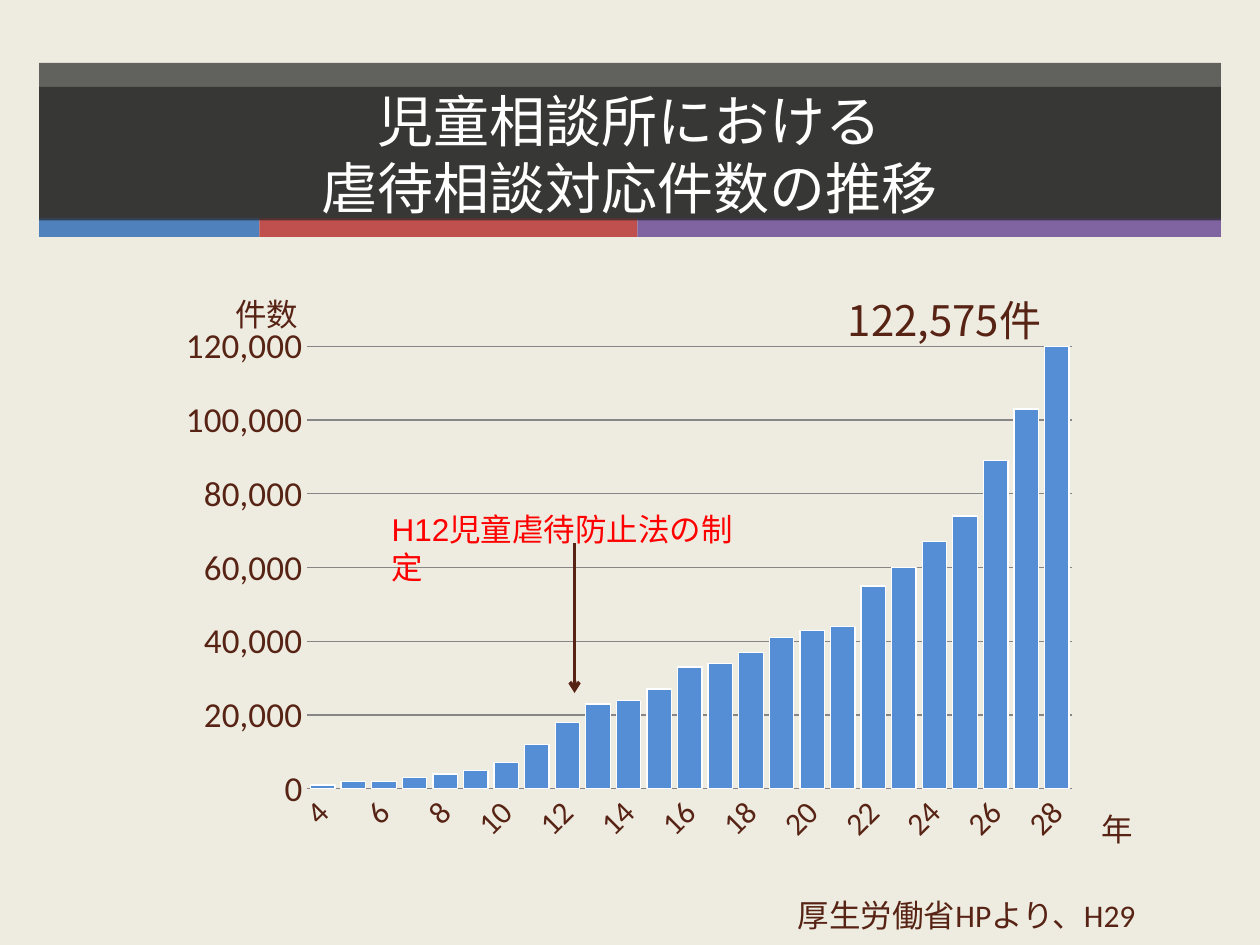
"""Build a slide charting child abuse consultations handled per year."""
from dataclasses import dataclass

import pptx
import pptx.chart.data
import pptx.dml.color
import pptx.enum.chart
import pptx.enum.shapes
import pptx.enum.text
import pptx.oxml
import pptx.oxml.ns
import pptx.util
from pptx.util import Inches

ALIGN = pptx.enum.text.PP_ALIGN
ANCHOR = pptx.enum.text.MSO_ANCHOR


@dataclass(frozen=True)
class Theme:
    background: str = "EEECE1"
    band: str = "262626"
    stripes: tuple = ("4F81BD", "C0504D", "8064A2")
    ink: str = "572314"
    alert: str = "FF0000"
    white: str = "FFFFFF"
    bar: str = "558ED5"
    grid: str = "868686"
    body_font: str = "Calibri"
    title_font: str = "Arial"
    figure_font: str = "Noto Sans CJK JP"
    title_size: int = 32
    figure_size: int = 24
    axis_size: int = 20
    body_size: int = 18


def rgb(color):
    return pptx.dml.color.RGBColor.from_string(color)


def append_xml(parent, tag, **attributes):
    child = pptx.oxml.parse_xml(f"<{tag} {pptx.oxml.ns.nsdecls(tag.split(':')[0])}/>")
    for name, value in attributes.items():
        child.set(name, str(value))
    parent.append(child)
    return child


def set_font(font, size, color, name):
    font.size = pptx.util.Pt(size)
    font.name = name
    font.color.rgb = rgb(color)


def write(frame, text, *, size, color, font, align=ALIGN.LEFT, anchor=ANCHOR.TOP, wrap=True):
    frame.word_wrap = wrap
    frame.vertical_anchor = anchor
    paragraph = frame.paragraphs[0]
    paragraph.text = text
    paragraph.alignment = align
    for run in paragraph.runs:
        set_font(run.font, size, color, font)


class SlideBuilder:
    def __init__(self, slide, theme):
        self.slide = slide
        self.theme = theme
        slide.background.fill.solid()
        slide.background.fill.fore_color.rgb = rgb(theme.background)

    def rectangle(self, left, top, width, height, color, opacity=100):
        shape = self.slide.shapes.add_shape(
            pptx.enum.shapes.MSO_SHAPE.RECTANGLE,
            Inches(left), Inches(top), Inches(width), Inches(height))
        shape.shadow.inherit = False
        shape.line.fill.background()
        shape.fill.solid()
        shape.fill.fore_color.rgb = rgb(color)
        if opacity < 100:
            tint = shape.fill._xPr.find(".//" + pptx.oxml.ns.qn("a:srgbClr"))
            append_xml(tint, "a:alpha", val=opacity * 1000)
        return shape

    def label(self, left, top, width, height, text, **style):
        box = self.slide.shapes.add_textbox(
            Inches(left), Inches(top), Inches(width), Inches(height))
        defaults = dict(size=self.theme.body_size, color=self.theme.ink,
                        font=self.theme.body_font)
        write(box.text_frame, text, **{**defaults, **style})

    def arrow(self, x, top, bottom):
        line = self.slide.shapes.add_connector(
            pptx.enum.shapes.MSO_CONNECTOR.STRAIGHT,
            Inches(x), Inches(top), Inches(x), Inches(bottom))
        line.line.color.rgb = rgb(self.theme.ink)
        line.line.width = pptx.util.Pt(2)
        append_xml(line.line._get_or_add_ln(), "a:tailEnd", type="arrow")
        append_xml(line._element.spPr, "a:effectLst")

    def column_chart(self, left, top, width, height, years, cases, plot):
        theme = self.theme
        chart_data = pptx.chart.data.CategoryChartData()
        chart_data.categories = [str(year) for year in years]
        chart_data.add_series("件数", cases)
        chart = self.slide.shapes.add_chart(
            pptx.enum.chart.XL_CHART_TYPE.COLUMN_CLUSTERED,
            Inches(left), Inches(top), Inches(width), Inches(height), chart_data).chart
        chart.has_legend = False
        chart.has_title = False
        set_font(chart.font, theme.body_size, theme.ink, theme.body_font)

        columns = chart.plots[0]
        columns.gap_width = 25
        columns.overlap = -25
        columns.vary_by_categories = False
        bars = columns.series[0].format
        bars.fill.solid()
        bars.fill.fore_color.rgb = rgb(theme.bar)
        bars.line.color.rgb = rgb(theme.white)
        bars.line.width = pptx.util.Pt(0.75)

        for axis, size in ((chart.category_axis, theme.body_size),
                           (chart.value_axis, theme.axis_size)):
            axis.major_tick_mark = pptx.enum.chart.XL_TICK_MARK.NONE
            axis.minor_tick_mark = pptx.enum.chart.XL_TICK_MARK.NONE
            set_font(axis.tick_labels.font, size, theme.ink, theme.body_font)
        self.style_axes(chart.category_axis, chart.value_axis)
        shares = [inches / whole for inches, whole in zip(plot, (width, height) * 2)]
        self.place_plot(chart, shares)

    def style_axes(self, year_axis, case_axis):
        year_axis.format.line.color.rgb = rgb(self.theme.grid)
        year_axis._element.txPr.bodyPr.set("rot", "-2700000")
        skip = append_xml(year_axis._element, "c:tickLblSkip", val=2)
        year_axis._element.find(pptx.oxml.ns.qn("c:noMultiLvlLbl")).addprevious(skip)
        case_axis.minimum_scale = 0
        case_axis.maximum_scale = 120000
        case_axis.major_unit = 20000
        case_axis.format.line.fill.background()
        case_axis.major_gridlines.format.line.color.rgb = rgb(self.theme.grid)
        case_axis.tick_labels.number_format = r"#,##0;[Red]\-#,##0"
        case_axis.tick_labels.number_format_is_linked = False

    def place_plot(self, chart, shares):
        area = chart._chartSpace.chart.plotArea
        for old in area.findall(pptx.oxml.ns.qn("c:layout")):
            area.remove(old)
        layout = append_xml(area, "c:layout")
        area.insert(0, layout)
        manual = append_xml(layout, "c:manualLayout")
        append_xml(manual, "c:layoutTarget", val="inner")
        for mode in ("xMode", "yMode"):
            append_xml(manual, f"c:{mode}", val="edge")
        for side, share in zip("xywh", shares):
            append_xml(manual, f"c:{side}", val=share)


def main():
    theme = Theme()
    deck = pptx.Presentation()
    deck.slide_width, deck.slide_height = Inches(10), Inches(7.5)
    builder = SlideBuilder(deck.slides.add_slide(deck.slide_layouts[6]), theme)

    margin, banner_width = 0.31, 9.38
    builder.rectangle(margin, 0.5, banner_width, 1.24, theme.band, opacity=70)
    stripe_left = margin
    for stripe_width, color in zip((1.75, 3, 4.63), theme.stripes):
        builder.rectangle(stripe_left, 1.73, stripe_width, 0.15, color)
        stripe_left += stripe_width
    title = builder.rectangle(margin, 0.69, banner_width, 1.06, theme.band, opacity=70)
    write(title.text_frame, "児童相談所における\v虐待相談対応件数の推移",
          size=theme.title_size, color=theme.white, font=theme.title_font,
          align=ALIGN.CENTER, anchor=ANCHOR.MIDDLE)

    builder.label(1.64, 7.06, 7.47, 0.4, "厚生労働省HPより、H29", align=ALIGN.RIGHT)
    cases = (1000, 2000, 2000, 3000, 4000, 5000, 7000, 12000, 18000, 23000, 24000, 27000,
             33000, 34000, 37000, 41000, 43000, 44000, 55000, 60000, 67000, 74000, 89000,
             103000, 123000)
    builder.column_chart(1.32, 2.49, 7.32, 4.29, range(4, 29), cases,
                         plot=(1.12, 0.26, 6.07, 3.51))
    builder.label(6.63, 2.29, 2.29, 0.5, "122,575件", size=theme.figure_size,
                  font=theme.figure_font, wrap=False)
    builder.label(1.77, 2.29, 0.71, 0.4, "件数", wrap=False)
    builder.label(8.64, 6.38, 0.45, 0.4, "年", wrap=False)
    builder.label(3.01, 4, 3.11, 0.4, "H12児童虐待防止法の制定",
                  color=theme.alert, font=theme.title_font)
    builder.arrow(4.56, 4.31, 5.5)
    deck.save("out.pptx")


if __name__ == "__main__":
    main()
